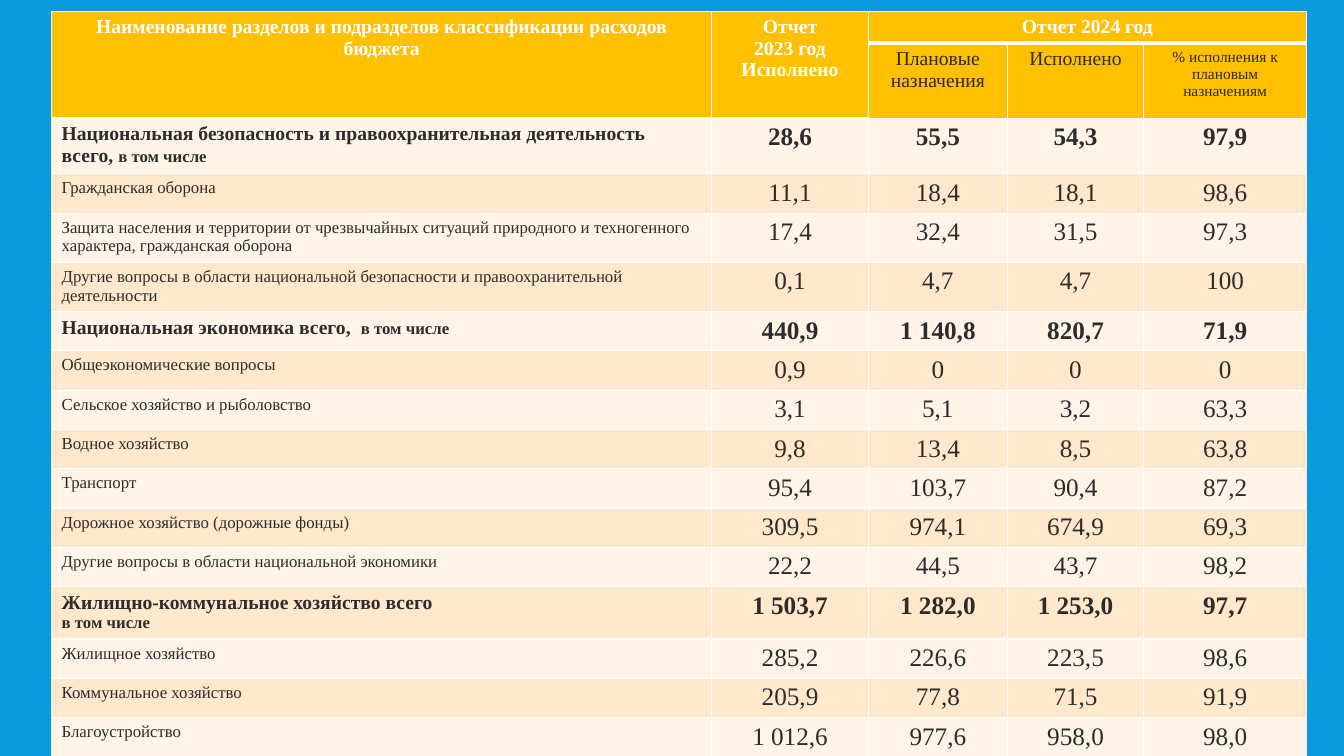
import pptx
import pptx.dml.color
import pptx.enum.text
import pptx.oxml
import pptx.oxml.ns
import pptx.util

Cm, Pt = pptx.util.Cm, pptx.util.Pt
PP_ALIGN = pptx.enum.text.PP_ALIGN
BLUE, GOLD, WHITE, DARK = "099BDD", "FFC000", "FFFFFF", "2C2C2C"
BANDS = ["FFF4E7", "FFE8CC"]
FONT = "Times New Roman"

COL_WIDTHS = [16.64, 3.94, 3.51, 3.43, 4.11]
HEADER_HEIGHTS = [0.81, 1.88]
TOTAL = {"size": Pt(14), "bold": True}
TOTAL_NOTE = {"size": Pt(12), "bold": True}
ITEM = {"size": Pt(12), "bold": False}
HEAD = {"size": Pt(14), "bold": True}
SUBHEAD = {"size": Pt(14), "bold": False}
SMALL_SUBHEAD = {"size": Pt(11), "bold": False}

# row, column, last row, last column, paragraphs, format, colour
HEADERS = [
    (0, 0, 1, 0, ["Наименование разделов и подразделов классификации расходов бюджета"], HEAD, WHITE),
    (0, 1, 1, 1, ["Отчет", "2023 год Исполнено"], HEAD, WHITE),
    (0, 2, 0, 4, ["Отчет 2024 год"], HEAD, WHITE),
    (1, 2, 1, 2, ["Плановые назначения"], SUBHEAD, DARK),
    (1, 3, 1, 3, ["Исполнено"], SUBHEAD, DARK),
    (1, 4, 1, 4, ["% исполнения к плановым назначениям"], SMALL_SUBHEAD, DARK),
]

# row height, label, note of a total row, values
NOTE = "в том числе"
ROWS = [
    (1.4, "Национальная безопасность и правоохранительная деятельность всего, ", NOTE,
     ["28,6", "55,5", "54,3", "97,9"]),
    (0.99, "Гражданская оборона", "", ["11,1", "18,4", "18,1", "98,6"]),
    (1.24, "Защита населения и территории от чрезвычайных ситуаций природного и "
     "техногенного характера, гражданская оборона", "", ["17,4", "32,4", "31,5", "97,3"]),
    (1.24, "Другие вопросы в области национальной безопасности и правоохранительной "
     "деятельности", "", ["0,1", "4,7", "4,7", "100"]),
    (0.99, "Национальная экономика всего,  ", NOTE, ["440,9", "1 140,8", "820,7", "71,9"]),
    (0.99, "Общеэкономические вопросы", "", ["0,9", "0", "0", "0"]),
    (0.99, "Сельское хозяйство и рыболовство", "", ["3,1", "5,1", "3,2", "63,3"]),
    (0.99, "Водное хозяйство", "", ["9,8", "13,4", "8,5", "63,8"]),
    (0.99, "Транспорт", "", ["95,4", "103,7", "90,4", "87,2"]),
    (0.99, "Дорожное хозяйство (дорожные фонды)", "", ["309,5", "974,1", "674,9", "69,3"]),
    (0.99, "Другие вопросы в области национальной экономики", "",
     ["22,2", "44,5", "43,7", "98,2"]),
    (1.32, "Жилищно-коммунальное хозяйство всего\n", NOTE,
     ["1 503,7", "1 282,0", "1 253,0", "97,7"]),
    (0.99, "Жилищное хозяйство", "", ["285,2", "226,6", "223,5", "98,6"]),
    (0.99, "Коммунальное хозяйство", "", ["205,9", "77,8", "71,5", "91,9"]),
    (0.99, "Благоустройство", "", ["1 012,6", "977,6", "958,0", "98,0"]),
]


def rgb(value):
    return pptx.dml.color.RGBColor.from_string(value)


def add_run(p, text, fmt, color):
    r = p.add_run()
    r.text = text
    for name, value in {"name": FONT, **fmt}.items():
        setattr(r.font, name, value)
    r.font.color.rgb = rgb(color)


def fill_cell(cell, color):
    cell.fill.solid()
    cell.fill.fore_color.rgb = rgb(color)


def set_borders(cell, widths):
    """Draw white borders; widths maps L, R, T, B, in that order, to points."""
    tc_pr = cell._tc.get_or_add_tcPr()
    for i, (side, width) in enumerate(widths.items()):
        tc_pr.insert(i, pptx.oxml.parse_xml(
            f'<a:ln{side} {pptx.oxml.ns.nsdecls("a")} w="{Pt(width)}"><a:solidFill>'
            f'<a:srgbClr val="{WHITE}"/></a:solidFill></a:ln{side}>'))


def add_header(table):
    for row, col, last_row, last_col, lines, fmt, color in HEADERS:
        cell = table.cell(row, col)
        if (row, col) != (last_row, last_col):
            cell.merge(table.cell(last_row, last_col))
        for i, line in enumerate(lines):
            tf = cell.text_frame
            p = tf.add_paragraph() if i else tf.paragraphs[0]
            p.alignment = PP_ALIGN.CENTER
            add_run(p, line, fmt, color)


def add_body_row(table, row, label, note, values):
    # Label, with the note on the same line or on the next one
    tf = table.cell(row, 0).text_frame
    p = tf.paragraphs[0]
    add_run(p, label.rstrip("\n"), TOTAL if note else ITEM, DARK)
    if note:
        if label.endswith("\n"):
            p = tf.add_paragraph()
        add_run(p, note, TOTAL_NOTE, DARK)
    # Figures
    for col, value in enumerate(values, 1):
        p = table.cell(row, col).text_frame.paragraphs[0]
        p.alignment = PP_ALIGN.CENTER
        add_run(p, value, {"size": Pt(18), "bold": bool(note)}, DARK)


def add_budget_table(s, left, top):
    heights = HEADER_HEIGHTS + [row[0] for row in ROWS]
    head_count = len(HEADER_HEIGHTS)
    table = s.shapes.add_table(len(heights), len(COL_WIDTHS), Cm(left), Cm(top),
                               Cm(sum(COL_WIDTHS)), Cm(sum(heights))).table
    table.first_row = table.horz_banding = False
    for column, width in zip(table.columns, COL_WIDTHS):
        column.width = Cm(width)
    for row, height in zip(table.rows, heights):
        row.height = Cm(height)

    # Text
    add_header(table)
    for i, (_, label, note, values) in enumerate(ROWS, head_count):
        add_body_row(table, i, label, note, values)

    # Fills and borders, thick under the header
    for i in range(len(heights)):
        for j in range(len(COL_WIDTHS)):
            cell = table.cell(i, j)
            fill_cell(cell, GOLD if i < head_count else BANDS[i % 2])
            thick = i == 0 or (i == 1 and j < 2)
            widths = {"L": 1} if j == 0 else {}
            widths["R"] = 1
            if i == 0:
                widths["T"] = 1
            widths["B"] = 3 if thick else 1
            set_borders(cell, widths)


def main():
    prs = pptx.Presentation()
    prs.slide_width, prs.slide_height = Cm(33.87), Cm(19.05)
    s = prs.slides.add_slide(prs.slide_layouts[6])
    s.background.fill.solid()
    s.background.fill.fore_color.rgb = rgb(BLUE)
    add_budget_table(s, 1.3, 0.28)
    prs.save("out.pptx")


if __name__ == "__main__":
    main()
